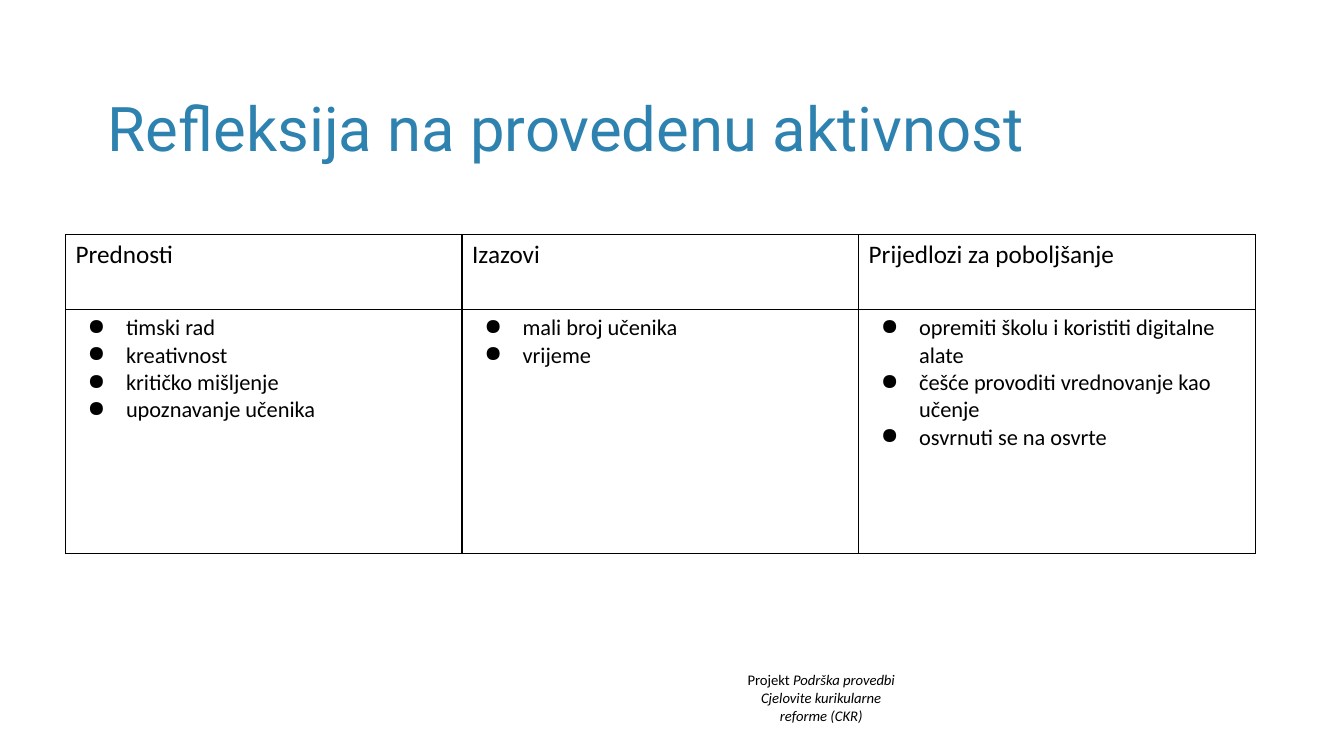
import pptx
import pptx.util
import pptx.oxml
import pptx.oxml.ns
import pptx.dml.color
import pptx.enum.text
from pptx.util import Inches

BLACK = "000000"
HEADS = ["Prednosti", "Izazovi", "Prijedlozi za poboljšanje"]
LISTS = [
    ["timski rad", "kreativnost", "kritičko mišljenje", "upoznavanje učenika"],
    ["mali broj učenika", "vrijeme"],
    ["opremiti školu i koristiti digitalne alate",
     "češće provoditi vrednovanje kao učenje",
     "osvrnuti se na osvrte"],
]


def paint(font, color):
    """Give a font a solid colour from a hex string."""
    font.color.rgb = pptx.dml.color.RGBColor.from_string(color)


def add_run(para, text, size, face="Calibri", color=BLACK, slant=False):
    """Add one formatted run to a paragraph."""
    run = para.add_run()
    run.text = text
    run.font.size = pptx.util.Pt(size)
    run.font.name = face
    run.font.italic = slant
    paint(run.font, color)


def add_mark(para):
    """Give a paragraph a hanging round bullet."""
    props = para._p.get_or_add_pPr()
    props.set("marL", str(Inches(0.5)))
    props.set("indent", str(Inches(-0.38)))
    mark = pptx.oxml.parse_xml(
        f'<a:buChar {pptx.oxml.ns.nsdecls("a")} char="●"/>')
    props.append(mark)


def frame(cell):
    """Clear the fill of a cell and draw its four borders."""
    cell.fill.background()
    props = cell._tc.get_or_add_tcPr()
    for place, side in enumerate("LRTB"):
        props.insert(place, pptx.oxml.parse_xml(
            f'<a:ln{side} {pptx.oxml.ns.nsdecls("a")} '
            f'w="{pptx.util.Pt(1)}"><a:solidFill><a:srgbClr val="{BLACK}"/>'
            f'</a:solidFill></a:ln{side}>'))


def fill_cell(cell, lines, size, marked):
    """Write lines into a framed cell, with bullets where asked."""
    frame(cell)
    text = cell.text_frame
    for place, line in enumerate(lines):
        para = text.add_paragraph() if place else text.paragraphs[0]
        if marked:
            add_mark(para)
        add_run(para, line, size)


def add_title(slide):
    """Place and write the slide title."""
    title = slide.shapes.title
    title.left, title.top = Inches(0.97), Inches(0.58)
    title.width, title.height = Inches(11.5), Inches(1.45)
    text = title.text_frame
    text.vertical_anchor = pptx.enum.text.MSO_ANCHOR.MIDDLE
    para = text.paragraphs[0]
    para.alignment = pptx.enum.text.PP_ALIGN.LEFT
    para.line_spacing = 0.9
    add_run(para, "Refleksija na provedenu aktivnost", 44, "Roboto", "2E82AF")


def add_grid(slide):
    """Add the table of strengths, challenges and proposals."""
    grid = slide.shapes.add_table(
        2, len(HEADS), Inches(0.65), Inches(2.33),
        Inches(11.8), Inches(3.16)).table
    grid.first_row = grid.horz_banding = False
    for row, height in zip(grid.rows, (0.74, 2.42)):
        row.height = Inches(height)
    for col, (head, items) in enumerate(zip(HEADS, LISTS)):
        fill_cell(grid.cell(0, col), [head], 18, False)
        fill_cell(grid.cell(1, col), items, 16, True)


def add_foot(slide):
    """Add the centred project note at the bottom."""
    box = slide.shapes.add_textbox(
        Inches(6.99), Inches(6.61), Inches(2.31), Inches(0.63))
    text = box.text_frame
    text.word_wrap = True
    first, last = text.paragraphs[0], text.add_paragraph()
    add_run(first, "Projekt ", 10.5)
    add_run(first, "Podrška provedbi", 10.5, slant=True)
    add_run(last, "Cjelovite kurikularne", 10.5, slant=True)
    last.add_line_break()
    add_run(last, "reforme (CKR)", 10.5, slant=True)
    for para in text.paragraphs:
        para.alignment = pptx.enum.text.PP_ALIGN.CENTER


def main():
    """Build the slide and save it."""
    deck = pptx.Presentation()
    deck.slide_width, deck.slide_height = Inches(13.33), Inches(7.5)
    slide = deck.slides.add_slide(deck.slide_layouts[5])
    add_foot(slide)
    add_title(slide)
    add_grid(slide)
    deck.save("out.pptx")


if __name__ == "__main__":
    main()
